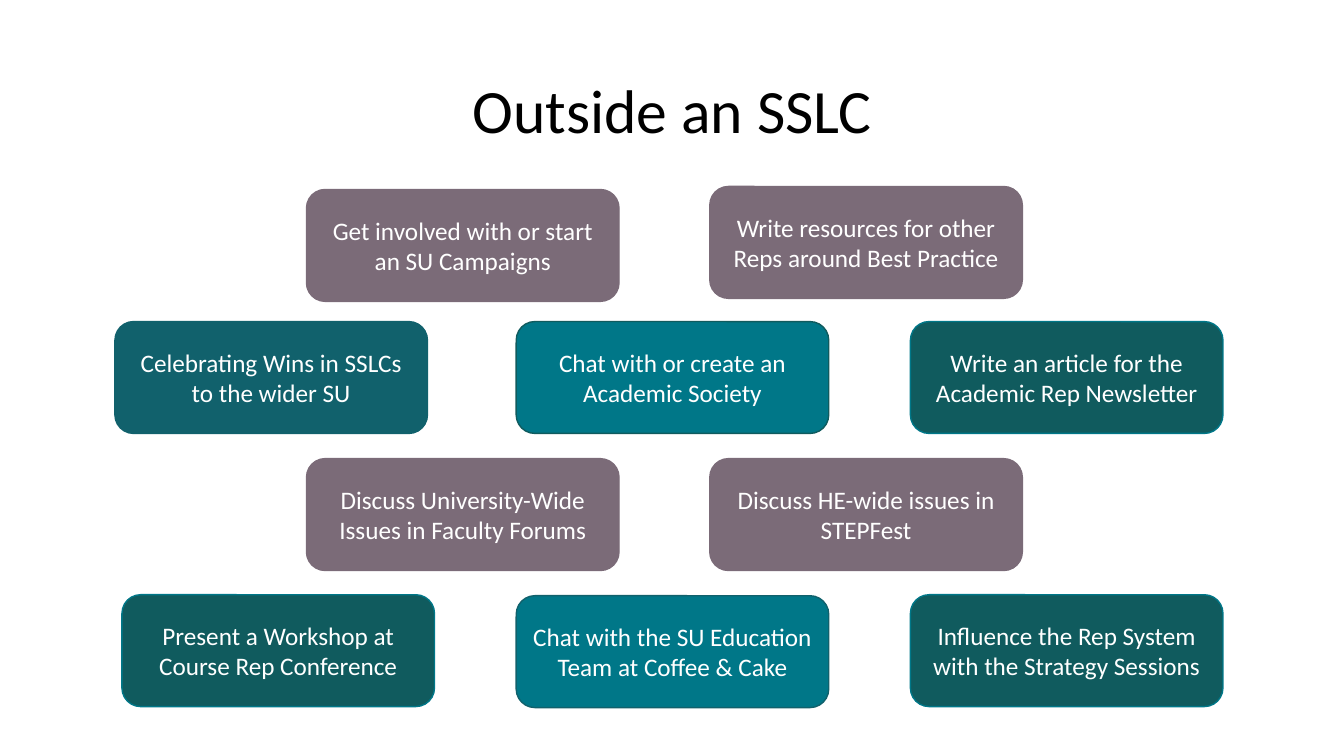
from dataclasses import dataclass

from pptx import Presentation
from pptx import util as u
from pptx.dml.color import RGBColor
from pptx.enum import shapes, text

FONT = "Calibri"
WHITE, BLACK = "FFFFFF", "000000"
MAUVE, PETROL, TEAL, PINE = "7B6B78", "11616C", "007788", "105B5E"
IDEA_WIDTH, IDEA_HEIGHT = 3.1, 1.11


@dataclass
class Idea:
    wording: str
    left: float
    top: float
    fill: str
    line: str


# Staggered rows: two ideas, three ideas, two ideas, three ideas
IDEAS = [
    Idea("Get involved with or start an SU Campaigns", 3.04, 1.88, MAUVE, MAUVE),
    Idea("Write resources for other Reps around Best Practice", 7.04, 1.85, MAUVE, MAUVE),
    Idea("Celebrating Wins in SSLCs to the wider SU", 1.14, 3.19, PETROL, PETROL),
    Idea("Chat with or create an Academic Society", 5.12, 3.19, TEAL, PINE),
    Idea("Write an article for the Academic Rep Newsletter", 9.03, 3.19, PINE, TEAL),
    Idea("Discuss University-Wide Issues in Faculty Forums", 3.04, 4.55, MAUVE, MAUVE),
    Idea("Discuss HE-wide issues in STEPFest", 7.04, 4.55, MAUVE, MAUVE),
    Idea("Present a Workshop at Course Rep Conference", 1.21, 5.9, PINE, TEAL),
    Idea("Chat with the SU Education Team at Coffee & Cake", 5.12, 5.91, TEAL, PETROL),
    Idea("Influence the Rep System with the Strategy Sessions", 9.03, 5.9, PINE, TEAL),
]


def color(value: str) -> RGBColor:
    return RGBColor.from_string(value)


def write(shape, wording: str, size: int, font_color: str) -> None:
    """Fill a shape with one centred paragraph."""
    frame = shape.text_frame
    frame.text = wording
    frame.word_wrap = True
    frame.vertical_anchor = text.MSO_ANCHOR.MIDDLE
    paragraph = frame.paragraphs[0]
    paragraph.alignment = text.PP_ALIGN.CENTER
    font = paragraph.runs[0].font
    font.name = FONT
    font.size = u.Pt(size)
    font.color.rgb = color(font_color)


def add_heading(slide, wording: str) -> None:
    heading = slide.shapes.add_textbox(
        u.Inches(0.92), u.Inches(0.4), u.Inches(11.5), u.Inches(1.45))
    write(heading, wording, 44, BLACK)
    heading.text_frame.paragraphs[0].line_spacing = 0.9


def add_idea(slide, idea: Idea) -> None:
    card = slide.shapes.add_shape(
        shapes.MSO_SHAPE.ROUNDED_RECTANGLE,
        u.Inches(idea.left), u.Inches(idea.top),
        u.Inches(IDEA_WIDTH), u.Inches(IDEA_HEIGHT))
    card.shadow.inherit = False
    card.fill.solid()
    card.fill.fore_color.rgb = color(idea.fill)
    card.line.color.rgb = color(idea.line)
    card.line.width = u.Pt(1)
    write(card, idea.wording, 18, WHITE)


def main() -> None:
    deck = Presentation()
    deck.slide_width, deck.slide_height = u.Inches(13.33), u.Inches(7.5)
    slide = deck.slides.add_slide(deck.slide_layouts[6])

    # Heading
    add_heading(slide, "Outside an SSLC")

    # Idea cards
    for idea in IDEAS:
        add_idea(slide, idea)

    deck.save("out.pptx")


if __name__ == "__main__":
    main()
